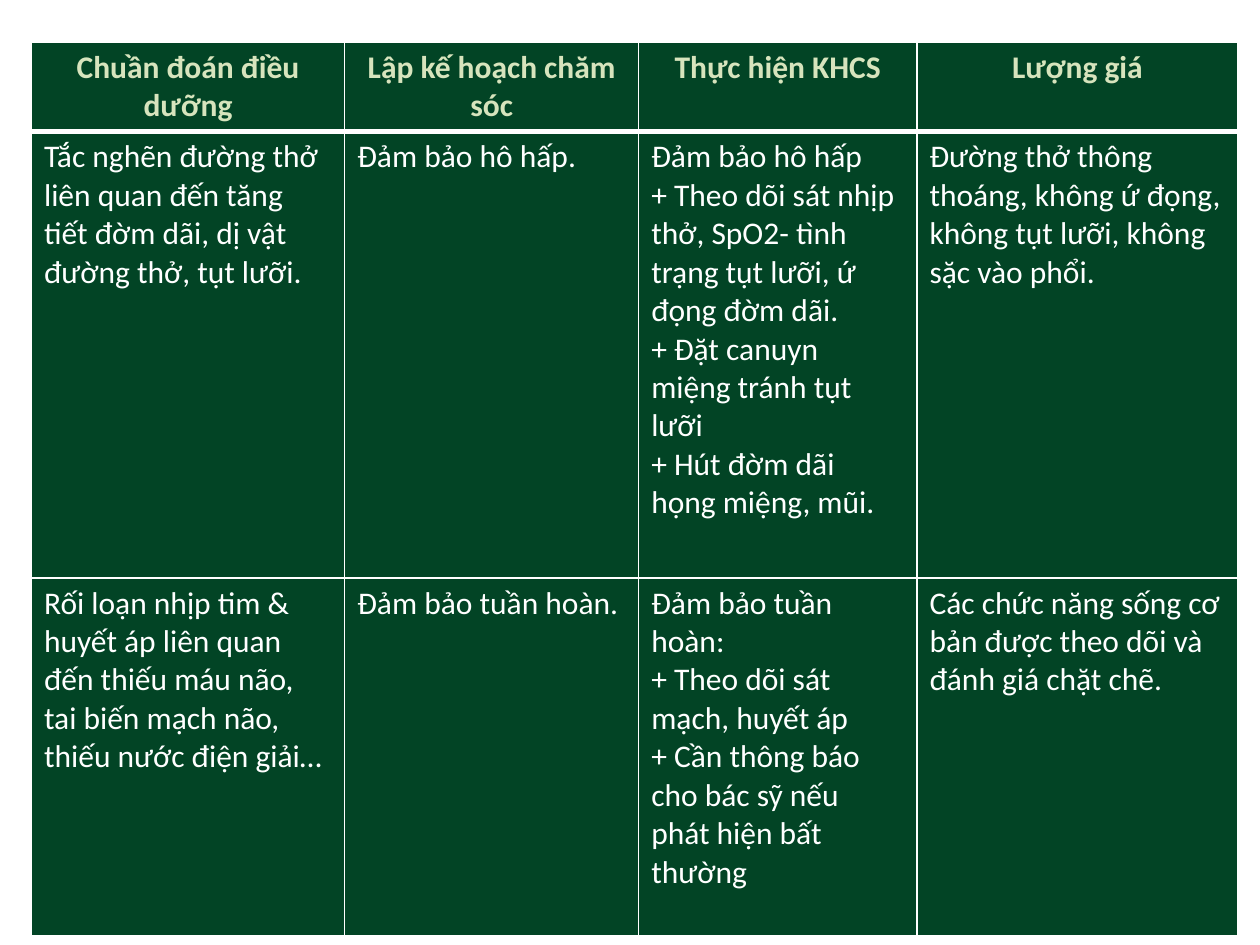
from lxml.etree import SubElement
from pptx import Presentation
from pptx.dml.color import RGBColor as Rgb
from pptx.enum.text import PP_ALIGN as Align
from pptx.oxml.ns import qn
from pptx.util import Pt

# Content: one list of paragraphs per body cell
HEADERS = ["Chuần đoán điều dưỡng", "Lập kế hoạch chăm sóc", "Thực hiện KHCS", "Lượng giá"]
BODY = [
    [
        ["Tắc nghẽn đường thở liên quan đến tăng tiết đờm dãi, dị vật đường thở, tụt lưỡi."],
        ["Đảm bảo hô hấp."],
        [
            "Đảm bảo hô hấp",
            "+ Theo dõi sát nhịp thở, SpO2- tình trạng tụt lưỡi, ứ đọng đờm dãi.",
            "+ Đặt canuyn miệng tránh tụt lưỡi",
            "+ Hút đờm dãi họng miệng, mũi.",
        ],
        ["Đường thở thông thoáng, không ứ đọng, không tụt lưỡi, không sặc vào phổi."],
    ],
    [
        ["Rối loạn nhịp tim & huyết áp liên quan đến thiếu máu não, tai biến mạch não, "
         "thiếu nước điện giải…"],
        ["Đảm bảo tuần hoàn."],
        [
            "Đảm bảo tuần hoàn:",
            "+ Theo dõi sát mạch, huyết áp",
            "+ Cần thông báo cho bác sỹ nếu phát hiện bất thường",
        ],
        ["Các chức năng sống cơ bản được theo dõi và đánh giá chặt chẽ."],
    ],
]

THEME = {
    "font": "Calibri", "size": 18,
    "fill": "024425", "border": "FFFFFF",
    "header": "D7E4BD", "body": "FFFFFF",
    "thin": 1, "thick": 3,
}
LEFT, TOP = 18, 24
COLUMN_WIDTHS = [179, 168, 159, 183.5]
ROW_HEIGHTS = [51, 255, 204.5]


def write_text(cell, paragraphs, *, color, bold=False, align=Align.LEFT):
    frame = cell.text_frame
    for index, text in enumerate(paragraphs):
        para = frame.add_paragraph() if index else frame.paragraphs[0]
        para.alignment = align
        span = para.add_run()
        span.text = text
        span.font.name = THEME["font"]
        span.font.size = Pt(THEME["size"])
        span.font.bold = bold
        span.font.color.rgb = Rgb.from_string(color)


def style_cell(cell, *, top, bottom):
    # Borders come before the fill in the cell properties
    properties = cell._tc.get_or_add_tcPr()
    widths = {"L": THEME["thin"], "R": THEME["thin"], "T": top, "B": bottom}
    for side, width in widths.items():
        line = SubElement(properties, qn(f"a:ln{side}"), w=str(Pt(width)))
        paint = SubElement(line, qn("a:solidFill"))
        SubElement(paint, qn("a:srgbClr"), val=THEME["border"])
    cell.fill.solid()
    cell.fill.fore_color.rgb = Rgb.from_string(THEME["fill"])


# Page
deck = Presentation()
deck.slide_width, deck.slide_height = Pt(720), Pt(540)
page = deck.slides.add_slide(deck.slide_layouts[6])

# Care plan table
table = page.shapes.add_table(
    len(ROW_HEIGHTS), len(COLUMN_WIDTHS), Pt(LEFT), Pt(TOP),
    Pt(sum(COLUMN_WIDTHS)), Pt(sum(ROW_HEIGHTS)),
).table
for column, width in zip(table.columns, COLUMN_WIDTHS):
    column.width = Pt(width)
for row, height in zip(table.rows, ROW_HEIGHTS):
    row.height = Pt(height)

# Cells: a thick rule separates the header from the body
thin, thick = THEME["thin"], THEME["thick"]
for column_index, header in enumerate(HEADERS):
    cell = table.cell(0, column_index)
    style_cell(cell, top=thin, bottom=thick)
    write_text(cell, [header], color=THEME["header"], bold=True, align=Align.CENTER)
for row_index, row in enumerate(BODY, start=1):
    for column_index, paragraphs in enumerate(row):
        cell = table.cell(row_index, column_index)
        style_cell(cell, top=thick if row_index == 1 else thin, bottom=thin)
        write_text(cell, paragraphs, color=THEME["body"])

deck.save("out.pptx")
